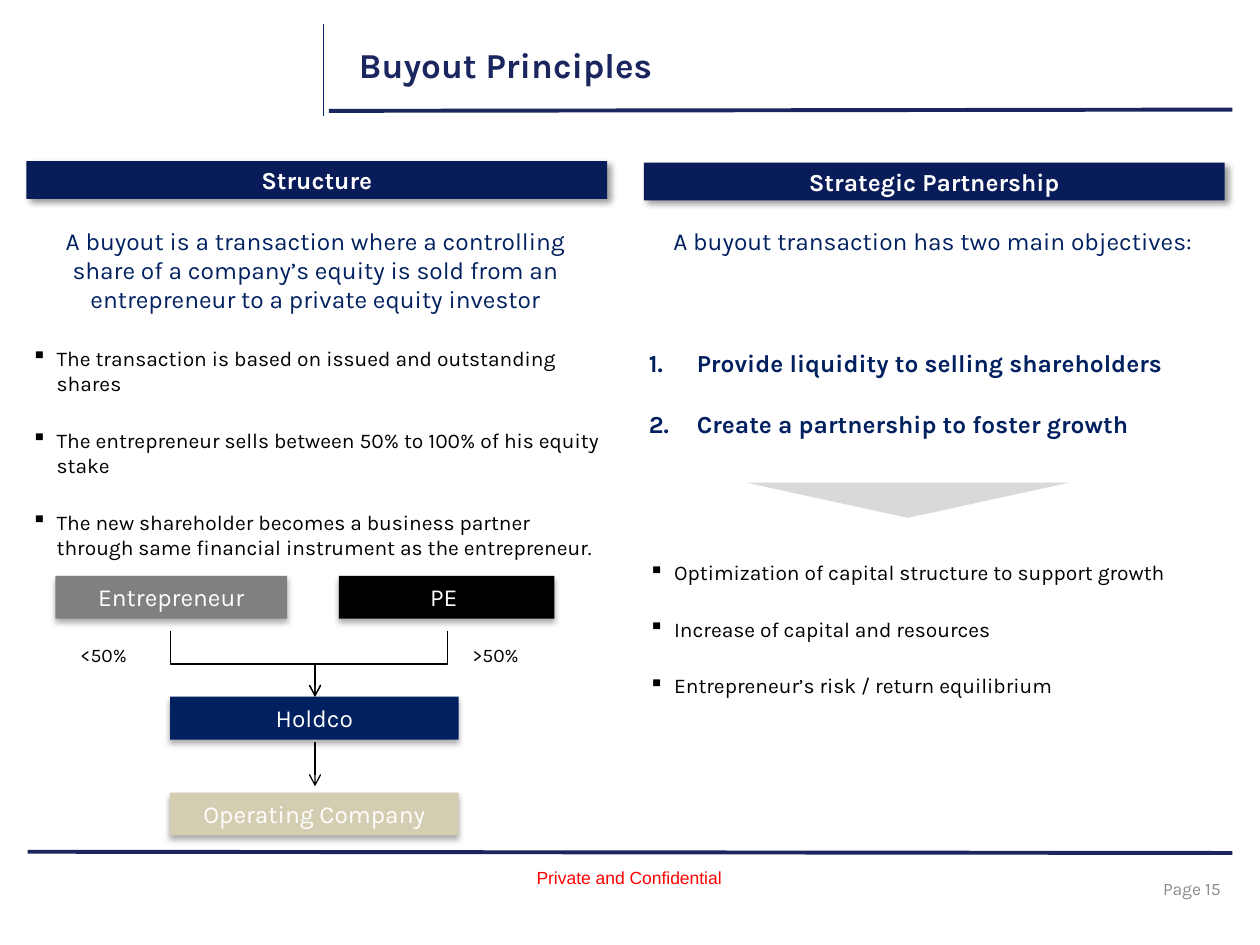
from lxml.etree import SubElement as Sub
from pptx import Presentation
from pptx.dml.color import RGBColor
from pptx.enum.shapes import MSO_CONNECTOR as Link, MSO_SHAPE as Kind
from pptx.enum.text import MSO_ANCHOR as Anchor, PP_ALIGN as Align
from pptx.oxml.ns import qn
from pptx.util import Inches, Pt

NAVY = RGBColor(0x1B, 0x26, 0x5F)
DEEP = RGBColor(0x09, 0x1C, 0x5A)
BLUE = RGBColor(0x00, 0x20, 0x60)
EDGE = RGBColor(0x00, 0x23, 0x68)
GRAY = RGBColor(0x80, 0x80, 0x80)
PALE = RGBColor(0xD9, 0xD9, 0xD9)
DIM = RGBColor(0x8C, 0x8C, 0x8C)
SAND = RGBColor(0xD3, 0xCD, 0xB1)
RED = RGBColor(0xFF, 0x00, 0x00)
BLACK = RGBColor(0x00, 0x00, 0x00)
WHITE = RGBColor(0xFF, 0xFF, 0xFF)

RULES = [
    (0.22, 6.76, 9.78, 6.77, NAVY, 2.25),
    (2.61, 0.88, 9.78, 0.87, NAVY, 2.25),
    (2.57, 0.19, 2.57, 0.86, EDGE, 0.75),
    (2.57, 0.25, 2.57, 0.92, EDGE, 0.75),
]
HEADS = [("Structure", 0.21, 1.28), ("Strategic Partnership", 5.11, 1.29)]
UNITS = [
    ("Entrepreneur", 0.44, 4.57, 1.84, GRAY),
    ("PE ", 2.69, 4.57, 1.71, BLACK),
    ("Holdco", 1.35, 5.53, 2.29, BLUE),
    ("Operating Company", 1.35, 6.29, 2.29, SAND),
]
SHARES = [("<50%", 0.54), (">50%", 3.65)]
LEFT = [
    ("lead", 0, "A buyout is a transaction where a controlling share of a company’s "
     "equity is sold from an entrepreneur to a private equity investor"),
    ("item", 6, "The transaction is based on issued and outstanding shares"),
    ("item", 6, "The entrepreneur sells between 50% to 100% of his equity stake"),
    ("item", 6, "The new shareholder becomes a business partner through same "
     "financial instrument as the entrepreneur."),
]
RIGHT = [
    ("lead", 0, "A buyout transaction has two main objectives:"),
    ("goal", 41, "Provide liquidity to selling shareholders"),
    ("goal", 6, "Create a partnership to foster growth"),
    ("item", 57.5, "Optimization of capital structure to support growth"),
    ("item", 6, "Increase of capital and resources"),
    ("item", 6, "Entrepreneur’s risk / return equilibrium"),
]
STYLES = {
    "lead": (14, BLUE, False, 0, None, {}),
    "item": (12, BLACK, False, 0.2, "a:buChar", {"char": "▪"}),
    "goal": (14, BLUE, True, 0.38, "a:buAutoNum", {"type": "arabicPeriod"}),
}

deck = Presentation()
deck.slide_width, deck.slide_height = Inches(10), Inches(7.5)
slide = deck.slides.add_slide(deck.slide_layouts[6])
shapes = slide.shapes


def style(para, size, color, bold=False, face="Karla"):
    font = para.font
    font.name, font.size, font.bold = face, Pt(size), bold
    font.color.rgb = color


def label(text, x, y, w, h, size, color, bold=False, face="Karla",
          align=Align.LEFT, anchor=Anchor.TOP, wrap=False):
    frame = shapes.add_textbox(*map(Inches, (x, y, w, h))).text_frame
    frame.word_wrap, frame.vertical_anchor = wrap, anchor
    para = frame.paragraphs[0]
    para.text, para.alignment = text, align
    style(para, size, color, bold, face)


def block(kind, x, y, w, h, fill):
    shape = shapes.add_shape(kind, *map(Inches, (x, y, w, h)))
    shape.shadow.inherit = False
    shape.fill.solid()
    shape.fill.fore_color.rgb = fill
    shape.line.fill.background()
    return shape


def panel(text, x, y, w, h, fill, shade, bold=False, anchor=Anchor.TOP):
    shape = block(Kind.RECTANGLE, x, y, w, h, fill)
    alpha, blur, dist, angle = shade
    glow = Sub(shape._element.spPr.find(qn("a:effectLst")), qn("a:outerShdw"),
               blurRad=str(Pt(blur)), dist=str(Pt(dist)),
               dir=str(angle * 60000), rotWithShape="0")
    tint = Sub(glow, qn("a:srgbClr"), val="000000")
    Sub(tint, qn("a:alpha"), val=str(alpha * 1000))
    frame = shape.text_frame
    frame.word_wrap, frame.vertical_anchor = True, anchor
    para = frame.paragraphs[0]
    para.text, para.alignment = text, Align.CENTER
    style(para, 14, WHITE, bold)


def line(x1, y1, x2, y2, color=BLACK, width=0.75, kind=Link.STRAIGHT, arrow=False):
    link = shapes.add_connector(kind, *map(Inches, (x1, y1, x2, y2)))
    link.line.color.rgb, link.line.width = color, Pt(width)
    Sub(link._element.spPr, qn("a:effectLst"))
    if arrow:
        Sub(link.line._get_or_add_ln(), qn("a:tailEnd"), type="arrow")
    return link


def elbow(x1, y1, x2, y2):
    mid, half = (x1 + x2) / 2, (y1 + y2) / 2
    drop, span = (y2 - y1) / 2, abs(x2 - x1) / 2
    side, turn = (1, 270) if x1 < x2 else (-1, 90)
    link = line(mid + side * drop, half - span, mid - side * drop, half + span,
                kind=Link.ELBOW, arrow=True)
    link._element.spPr.find(qn("a:xfrm")).set("rot", str(turn * 60000))


def body(x, paras):
    frame = shapes.add_textbox(*map(Inches, (x, 1.75, 4.59, 4.13))).text_frame
    frame.word_wrap = True
    frame.margin_left = frame.margin_right = Inches(0.04)
    frame.margin_top = frame.margin_bottom = Inches(0.04)
    for i, (name, before, text) in enumerate(paras):
        para = frame.add_paragraph() if i else frame.paragraphs[0]
        size, color, bold, indent, tag, mark = STYLES[name]
        para.text = text
        para.alignment = Align.LEFT if tag else Align.CENTER
        para.space_before, para.space_after = Pt(before), Pt(12)
        if tag:
            props = para._p.get_or_add_pPr()
            props.set("marL", str(Inches(indent)))
            props.set("indent", str(-Inches(indent)))
            Sub(props, qn(tag), **mark)
        style(para, size, color, bold)


for rule in RULES:
    line(*rule)
label("Page 15 ", 7.49, 6.85, 2.33, 0.4, 10, DIM,
      align=Align.RIGHT, anchor=Anchor.MIDDLE, wrap=True)
label("Private and Confidential", 4.16, 6.83, 1.68, 0.27, 10, RED, face="Arial")
label("Buyout Principles", 2.75, 0.3, 6.75, 0.53, 20, NAVY, bold=True, wrap=True)
for text, x, y in HEADS:
    panel(text, x, y, 4.61, 0.3, DEEP, (40, 4, 3, 45), True, Anchor.MIDDLE)
for text, x, y, w, fill in UNITS:
    panel(text, x, y, w, 0.34, fill, (32, 3.5, 2.2, 90))
for x in (1.35, 3.55):
    elbow(x, 5.01, 2.5, 5.53)
line(2.5, 5.89, 2.5, 6.24, arrow=True)
for text, x in SHARES:
    label(text, x, 5.06, 0.62, 0.29, 11, BLACK)
body(0.21, LEFT)
body(5.11, RIGHT)
block(Kind.ISOSCELES_TRIANGLE, 5.92, 3.83, 2.57, 0.28, PALE).rotation = 180
deck.save("out.pptx")
